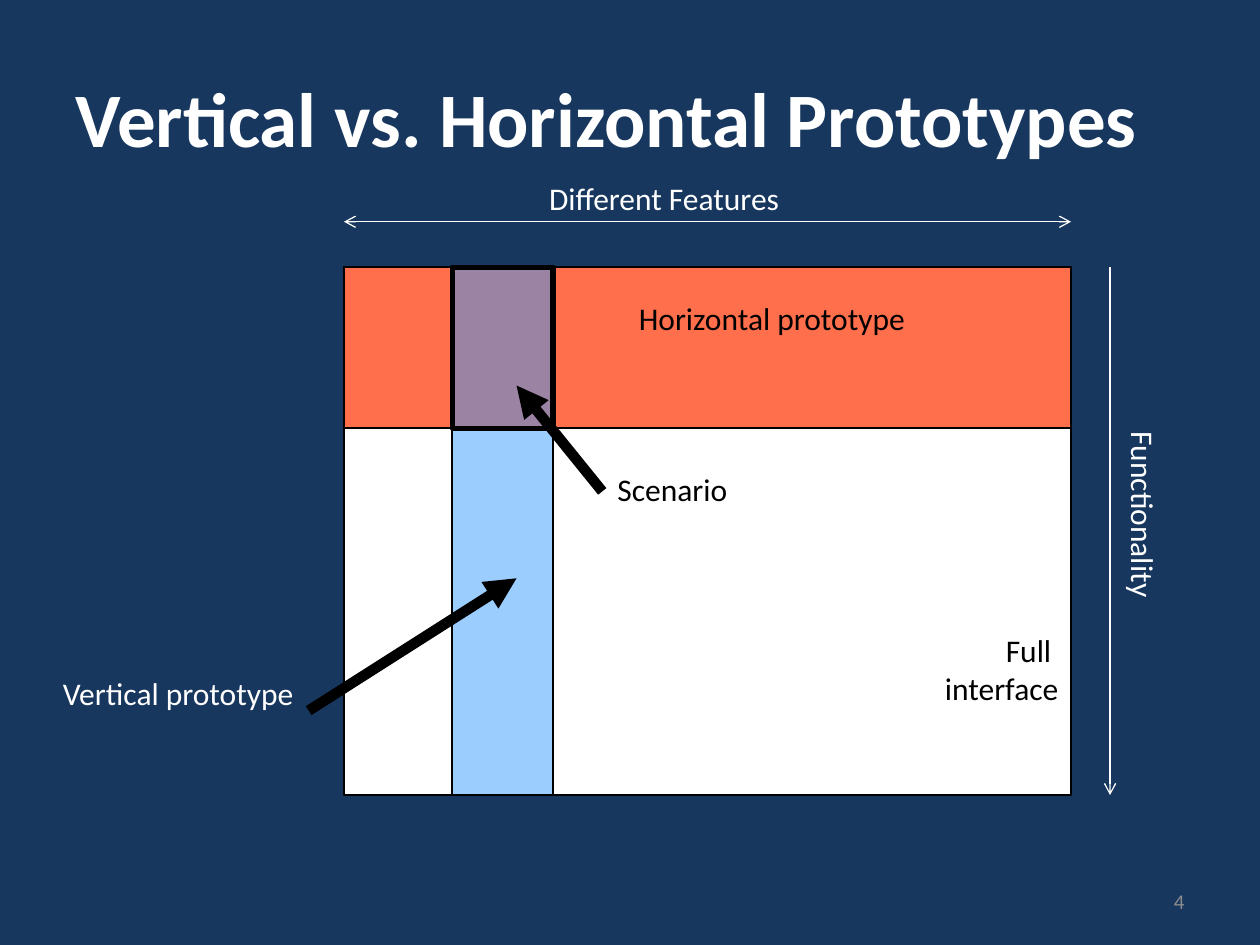
from pptx import Presentation
from pptx import util as u
from pptx.dml.color import RGBColor
from pptx.enum import shapes, text
from pptx.oxml.ns import qn
from lxml import etree

COLORS = {
    "navy": "17375E",
    "white": "FFFFFF",
    "black": "000000",
    "gray": "8C8C8C",
    "orange": "FF3300",
    "blue": "3399FF",
}
LEFT, TOP, WIDTH, HEIGHT = 2.73, 2.12, 5.77, 4.19
RIGHT, BOTTOM = LEFT + WIDTH, TOP + HEIGHT
BAND_HEIGHT = 1.28
COLUMN_LEFT, COLUMN_WIDTH = 3.59, 0.8


def color(name):
    return RGBColor.from_string(COLORS[name])


def add_text(page, words, left, top, width, height, size=18, ink="white",
             bold=False, align=text.PP_ALIGN.LEFT, anchor=text.MSO_ANCHOR.TOP,
             inset=True, wrap=False, rotation=0):
    box = page.shapes.add_textbox(*map(u.Inches, (left, top, width, height)))
    box.rotation = rotation
    frame = box.text_frame
    frame.word_wrap = wrap
    frame.auto_size = (text.MSO_AUTO_SIZE.NONE if wrap
                       else text.MSO_AUTO_SIZE.SHAPE_TO_FIT_TEXT)
    frame.vertical_anchor = anchor
    if not inset:
        frame.margin_left = frame.margin_right = 0
        frame.margin_top = frame.margin_bottom = 0
    para = frame.paragraphs[0]
    para.text = words
    para.alignment = align
    for span in para.runs:
        span.font.name = "Calibri"
        span.font.size = u.Pt(size)
        span.font.bold = bold
        span.font.color.rgb = color(ink)
    return box


def add_area(page, left, width, height, fill=None, opacity=100, weight=1):
    area = page.shapes.add_shape(
        shapes.MSO_SHAPE.RECTANGLE, *map(u.Inches, (left, TOP, width, height)))
    area.shadow.inherit = False
    area.line.color.rgb = color("black")
    area.line.width = u.Pt(weight)
    if fill is None:
        area.fill.background()
        return area
    area.fill.solid()
    area.fill.fore_color.rgb = color(fill)
    if opacity < 100:
        tint = area.fill._xPr.find(qn("a:solidFill"))[0]
        etree.SubElement(tint, qn("a:alpha"), val=str(opacity * 1000))
    return area


def add_arrow(page, start, end, ink="black", weight=6, head=None, tail="triangle"):
    arrow = page.shapes.add_connector(
        shapes.MSO_CONNECTOR.STRAIGHT, *map(u.Inches, (*start, *end)))
    arrow.line.color.rgb = color(ink)
    arrow.line.width = u.Pt(weight)
    outline = arrow.line._get_or_add_ln()
    for tag, kind in (("a:headEnd", head), ("a:tailEnd", tail)):
        if kind:
            etree.SubElement(outline, qn(tag), type=kind)
    etree.SubElement(arrow._element.spPr, qn("a:effectLst"))
    return arrow


def main():
    deck = Presentation()
    deck.slide_width, deck.slide_height = u.Inches(10), u.Inches(7.5)
    page = deck.slides.add_slide(deck.slide_layouts[6])
    page.background.fill.solid()
    page.background.fill.fore_color.rgb = color("navy")

    middle, right = text.MSO_ANCHOR.MIDDLE, text.PP_ALIGN.RIGHT
    add_text(page, "Vertical vs. Horizontal Prototypes", 0.5, 0.3, 9, 1.25,
             size=44, bold=True, anchor=middle, wrap=True)
    add_text(page, "4", 7.17, 6.95, 2.33, 0.4, size=12, ink="gray",
             align=right, anchor=middle, wrap=True)

    add_area(page, LEFT, WIDTH, HEIGHT, "white")
    add_text(page, "Vertical prototype", 0.5, 5.35, 1.87, 0.3, inset=False)
    add_text(page, "Scenario", 4.9, 3.73, 1.43, 0.65, ink="black", inset=False)
    add_area(page, LEFT, WIDTH, BAND_HEIGHT, "orange", opacity=70)
    add_text(page, "Horizontal prototype", 5.07, 2.37, 2.15, 0.3,
             ink="black", inset=False)
    add_area(page, COLUMN_LEFT, COLUMN_WIDTH, HEIGHT, "blue", opacity=49)
    add_area(page, COLUMN_LEFT, COLUMN_WIDTH, BAND_HEIGHT, weight=3)
    add_arrow(page, (4.78, 3.9), (4.1, 3.06))
    add_text(page, "Full \ninterface", 7.01, 5.01, 1.39, 1.3, ink="black",
             align=right, inset=False)
    add_arrow(page, (2.45, 5.64), (4.1, 4.59))

    add_arrow(page, (LEFT, 1.76), (RIGHT, 1.76), "white", 0.75,
              head="arrow", tail="arrow")
    add_arrow(page, (8.81, TOP), (8.81, BOTTOM), "white", 0.75, tail="arrow")
    add_text(page, "Different Features", 4.26, 1.37, 2.07, 0.4)
    add_text(page, "Functionality", 8.31, 3.89, 1.53, 0.4, rotation=90)
    deck.save("out.pptx")


if __name__ == "__main__":
    main()
